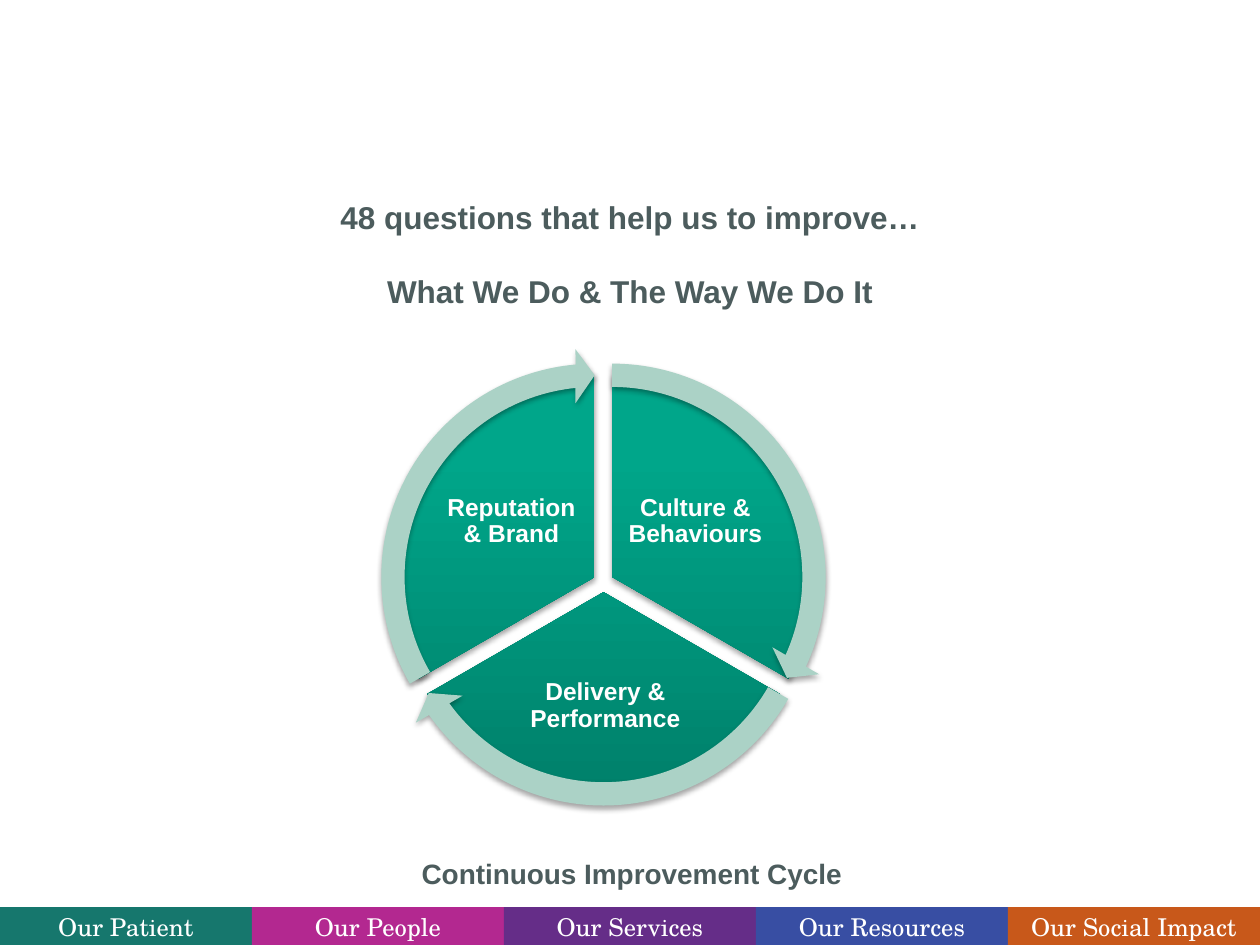
from lxml.etree import SubElement
from pptx import Presentation
from pptx.dml.color import RGBColor
from pptx.enum.shapes import MSO_SHAPE
from pptx.enum.text import MSO_ANCHOR, MSO_AUTO_SIZE, PP_ALIGN
from pptx.oxml.ns import qn
from pptx.util import Inches, Pt

COLORS = {
    "white": "FFFFFF", "text": "4C5C5D", "dark": "00806A", "light": "00A68A",
    "arrow": "ABD2C6", "shadow": "000000",
}
PILLARS = [
    ("Our Patient", "16776D"),
    ("Our People", "B32890"),
    ("Our Services", "652D88"),
    ("Our Resources", "384EA3"),
    ("Our Social Impact", "C8581A"),
]
HEADING = ["48 questions that help us to improve…", "What We Do & The Way We Do It"]
CAPTION = "Continuous Improvement Cycle"
CYCLE = [
    ("Culture & Behaviours", (4.86, 4.58), (162, 18), (14.725, 161.994),
     (4.94, 3.66, 1.16, 0.96)),
    ("Delivery & Performance", (4.79, 4.7), (18, 90), (86.72, 18.005),
     (3.94, 5.18, 1.73, 0.85)),
    ("Reputation & Brand", (4.72, 4.58), (90, 162), (158.73, 90),
     (3.48, 3.66, 1.16, 0.96)),
]
PIE_SIZE = 3.23
ARROW_SIZE = 3.63


def rgb(value):
    return RGBColor.from_string(value)


def write(shape, lines, size, color, font="Arial", bold=True, margin=0.0,
          anchor=MSO_ANCHOR.MIDDLE, line_spacing=1.0, gap=0):
    frame = shape.text_frame
    frame.word_wrap = True
    frame.auto_size = MSO_AUTO_SIZE.NONE
    frame.vertical_anchor = anchor
    frame.margin_left = frame.margin_right = Inches(margin)
    frame.margin_top = frame.margin_bottom = Inches(min(margin, 0.05))
    for index, line in enumerate(lines):
        para = frame.add_paragraph() if index else frame.paragraphs[0]
        para.alignment = PP_ALIGN.CENTER
        para.line_spacing = line_spacing
        if index:
            para.space_before = Pt(gap)
        span = para.add_run()
        span.text = line
        span.font.name = font
        span.font.size = Pt(size)
        span.font.bold = bold
        span.font.color.rgb = rgb(color)


def add_shadow(shape):
    shape.shadow.inherit = False
    effects = shape._element.spPr.find(qn("a:effectLst"))
    outer = SubElement(effects, qn("a:outerShdw"), blurRad=str(Pt(3.1)),
                       dist=str(Pt(1.8)), dir="5400000", rotWithShape="0")
    tint = SubElement(outer, qn("a:srgbClr"), val=COLORS["shadow"])
    SubElement(tint, qn("a:alpha"), val="35000")


def add_round(page, kind, center, size, adjustments):
    left, top = (Inches(middle - size / 2) for middle in center)
    shape = page.shapes.add_shape(kind, left, top, Inches(size), Inches(size))
    for index, value in enumerate(adjustments):
        shape.adjustments[index] = value
    shape.line.fill.background()
    add_shadow(shape)
    return shape


def add_pillars(page, slide_width):
    width = slide_width / len(PILLARS)
    for index, (name, color) in enumerate(PILLARS):
        bar = page.shapes.add_shape(MSO_SHAPE.RECTANGLE, Inches(index * width),
                                    Inches(7.2), Inches(width), Inches(0.31))
        bar.shadow.inherit = False
        bar.fill.solid()
        bar.fill.fore_color.rgb = rgb(color)
        bar.line.fill.background()
        write(bar, [name], 14, COLORS["white"], font="TeX Gyre Schola", bold=False)


def add_cycle(page):
    for label, center, angles, _, label_place in CYCLE:
        slice_shape = add_round(page, MSO_SHAPE.PIE, center, PIE_SIZE, angles)
        slice_shape.fill.gradient()
        slice_shape.fill.gradient_angle = 90
        stops = slice_shape.fill.gradient_stops
        for stop, color, position in zip(stops, ("dark", "light"), (0, 0.8)):
            stop.color.rgb = rgb(COLORS[color])
            stop.position = position
        box = page.shapes.add_textbox(*map(Inches, label_place))
        write(box, [label], 14, COLORS["white"], margin=0.02, line_spacing=0.9)
    for _, center, _, (end, start), _ in CYCLE:
        arrow = add_round(page, MSO_SHAPE.CIRCULAR_ARROW, center, ARROW_SIZE,
                          (0.051, 3.275, end, start, 0.059))
        arrow.fill.solid()
        arrow.fill.fore_color.rgb = rgb(COLORS["arrow"])


def main():
    deck = Presentation()
    deck.slide_width, deck.slide_height = Inches(10), Inches(7.5)
    page = deck.slides.add_slide(deck.slide_layouts[5])
    title = page.shapes.title
    title.left, title.top = Inches(1.24), Inches(1.52)
    title.width, title.height = Inches(7.52), Inches(1.01)
    write(title, HEADING, 18, COLORS["text"], margin=0.1,
          anchor=MSO_ANCHOR.TOP, gap=20.7)
    add_pillars(page, 10)
    caption = page.shapes.add_textbox(Inches(2.36), Inches(6.75),
                                      Inches(5.31), Inches(0.37))
    write(caption, [CAPTION], 16, COLORS["text"], margin=0.1, anchor=MSO_ANCHOR.TOP)
    add_cycle(page)
    deck.save("out.pptx")


if __name__ == "__main__":
    main()
